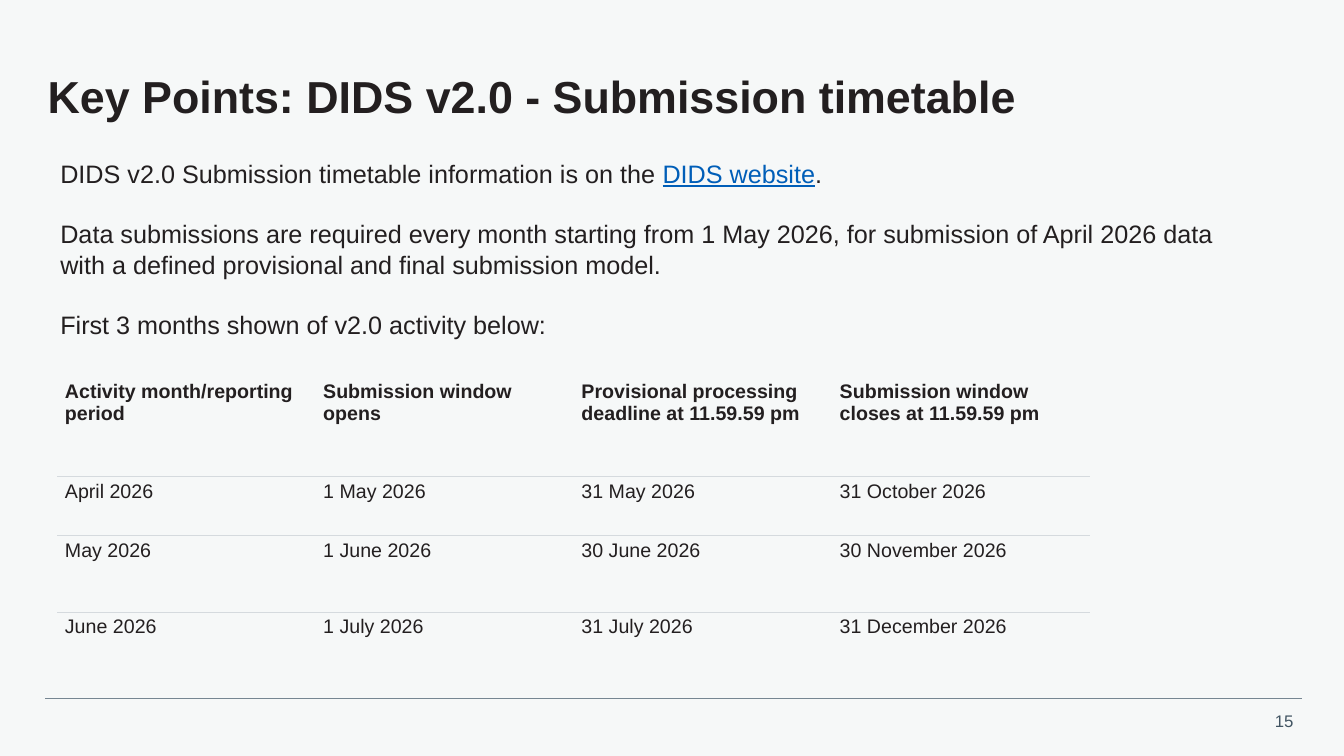
import pptx
import pptx.dml.color
import pptx.enum.shapes
import pptx.enum.text
import pptx.oxml
import pptx.oxml.ns
import pptx.util

Pt = pptx.util.Pt
ALIGN = pptx.enum.text.PP_ALIGN
ANCHOR = pptx.enum.text.MSO_ANCHOR
INK = "231F20"
LINK = "005EB8"
RULE = "D5DADE"
TIMETABLE = [
    ["Activity month/reporting period", "Submission window opens",
     "Provisional processing deadline at 11.59.59 pm",
     "Submission window closes at\u00a011.59.59 pm"],
    ["April 2026", "1 May 2026", "31 May 2026", "31 October 2026"],
    ["May 2026", "1 June 2026", "30 June 2026", "30 November 2026"],
    ["June 2026", "1 July 2026", "31 July 2026", "31 December 2026"],
]
ROW_HEIGHTS = [105.1, 42, 54.6, 54.6]
RULE_WIDTHS = [0, 1, 0.33, 0.33, 0]


def rgb(value):
    """Turn a hex string into a colour."""
    return pptx.dml.color.RGBColor.from_string(value)


def add_run(paragraph, text, size, color=INK, bold=False, underline=False):
    """Append one formatted run."""
    run = paragraph.add_run()
    run.text = text
    run.font.name = "Arial"
    run.font.size = Pt(size)
    run.font.bold = bold
    run.font.underline = underline
    run.font.color.rgb = rgb(color)


def add_text(slide, box, paragraphs, size, bold=False, align=ALIGN.LEFT,
             anchor=ANCHOR.TOP, gap=0, margins=(7.2, 3.6)):
    """Add a text box; each paragraph is a list of (text, colour, underline)."""
    frame = slide.shapes.add_textbox(*map(Pt, box)).text_frame
    frame.word_wrap = True
    frame.vertical_anchor = anchor
    frame.margin_left = frame.margin_right = Pt(margins[0])
    frame.margin_top = frame.margin_bottom = Pt(margins[1])
    for index, runs in enumerate(paragraphs):
        paragraph = frame.add_paragraph() if index else frame.paragraphs[0]
        paragraph.alignment = align
        paragraph.space_before = Pt(gap if index else 0)
        for text, color, underline in runs:
            add_run(paragraph, text, size, color, bold, underline)


def add_rule(slide, left, right, top, color, width):
    """Add a horizontal line without a shadow."""
    rule = slide.shapes.add_connector(
        pptx.enum.shapes.MSO_CONNECTOR.STRAIGHT,
        Pt(left), Pt(top), Pt(right), Pt(top))
    rule.line.color.rgb = rgb(color)
    rule.line.width = Pt(width)
    properties = rule._element.spPr
    properties.append(properties.makeelement(pptx.oxml.ns.qn("a:effectLst"), {}))


def set_borders(cell, top, bottom):
    """Give a cell top and bottom rules of the given widths, and no sides."""
    properties = cell._tc.get_or_add_tcPr()
    for index, (side, width) in enumerate(
            [("L", 0), ("R", 0), ("T", top), ("B", bottom)]):
        fill = (f'<a:solidFill><a:srgbClr val="{RULE}"/></a:solidFill>'
                if width else "<a:noFill/>")
        properties.insert(index, pptx.oxml.parse_xml(
            f'<a:ln{side} {pptx.oxml.ns.nsdecls("a")} w="{int(Pt(width))}">'
            f'{fill}</a:ln{side}>'))


def add_timetable(slide, left, top, width):
    """Add the submission timetable with ruled rows."""
    table = slide.shapes.add_table(
        len(TIMETABLE), len(TIMETABLE[0]), Pt(left), Pt(top),
        Pt(width), Pt(sum(ROW_HEIGHTS))).table
    table.first_row = table.horz_banding = False
    for row, dates in enumerate(TIMETABLE):
        table.rows[row].height = Pt(ROW_HEIGHTS[row])
        for column, date in enumerate(dates):
            cell = table.cell(row, column)
            cell.fill.background()
            cell.margin_left = cell.margin_right = Pt(5.4)
            cell.margin_top = cell.margin_bottom = Pt(2.7)
            cell.vertical_anchor = ANCHOR.TOP if row else ANCHOR.MIDDLE
            add_run(cell.text_frame.paragraphs[0], date, 14, bold=row == 0)
            set_borders(cell, RULE_WIDTHS[row], RULE_WIDTHS[row + 1])


def main():
    """Build the submission timetable slide."""
    deck = pptx.Presentation()
    deck.slide_width, deck.slide_height = Pt(960), Pt(540)
    slide = deck.slides.add_slide(deck.slide_layouts[6])
    slide.background.fill.solid()
    slide.background.fill.fore_color.rgb = rgb("F6F8F8")

    add_rule(slide, 32.4, 929.8, 498.8, "768692", 0.5)
    add_text(slide, (892, 504, 39, 21.6), [[("15", "425563", False)]], 12,
             align=ALIGN.RIGHT)
    add_text(slide, (34, 34, 898, 68),
             [[("Key Points: DIDS v2.0 - Submission timetable", INK, False)]],
             32, bold=True, anchor=ANCHOR.MIDDLE, margins=(0, 0))
    add_text(slide, (36, 109.4, 850.3, 181.4), [
        [("DIDS v2.0 Submission timetable information is on the ", INK, False),
         ("DIDS website", LINK, True), (".", INK, False)],
        [("Data submissions are required every month starting from 1 May 2026, "
          "for submission of April 2026 data with a defined provisional and "
          "final submission model.", INK, False)],
        [("First 3 months shown of v2.0 activity below:", INK, False)],
    ], 18, gap=21.6)
    add_timetable(slide, 41, 235.4, 738)
    deck.save("out.pptx")


if __name__ == "__main__":
    main()
